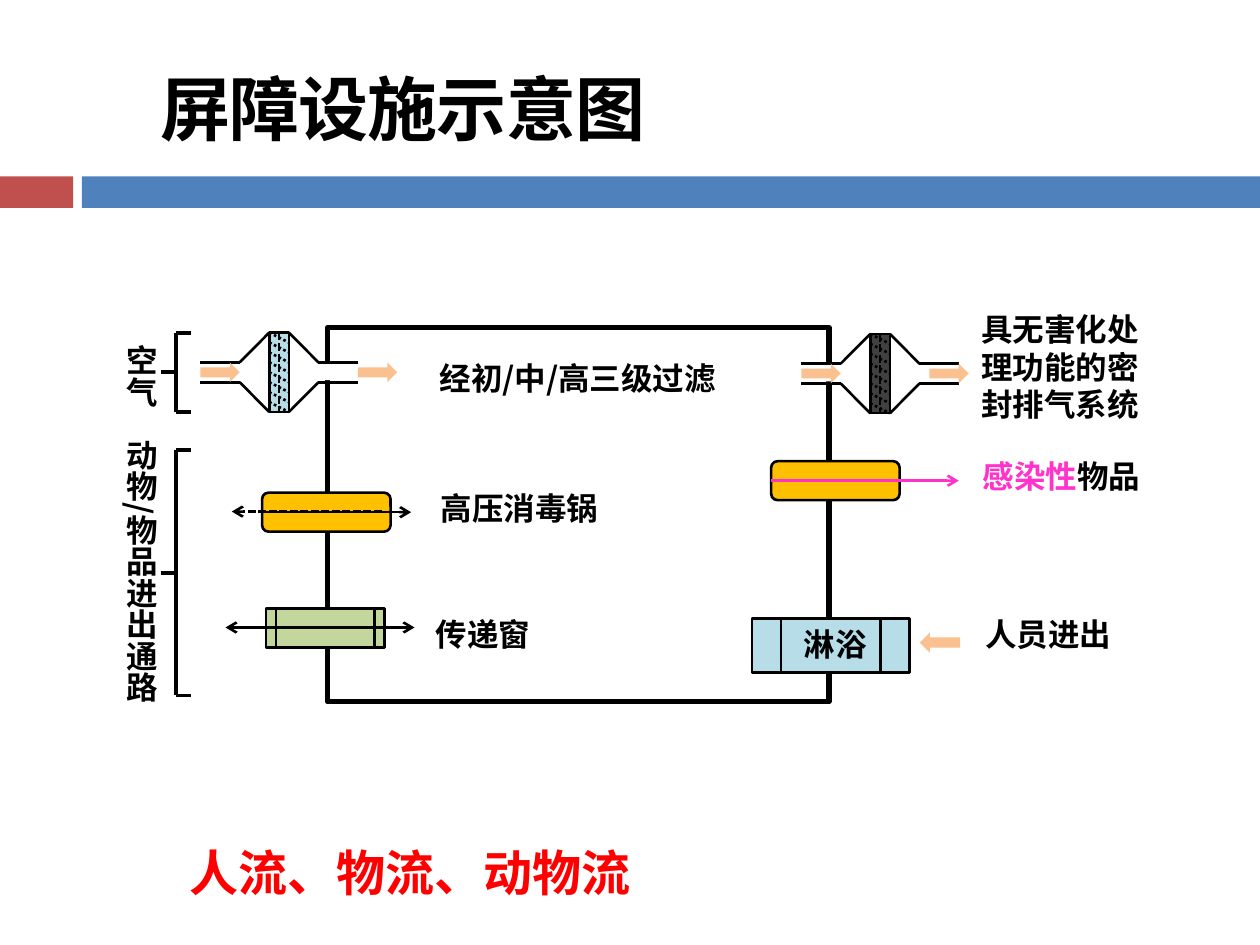
from dataclasses import dataclass

from lxml.etree import SubElement
from pptx import Presentation
from pptx.dml.color import RGBColor
from pptx.enum.dml import MSO_LINE
from pptx.enum.shapes import MSO_CONNECTOR, MSO_SHAPE
from pptx.enum.text import MSO_ANCHOR, MSO_AUTO_SIZE, PP_ALIGN
from pptx.oxml.ns import qn
from pptx.util import Inches, Pt

COLORS = {
    "black": "000000", "white": "FFFFFF", "red": "FF0000", "pink": "FF33CC",
    "brick": "C0504D", "blue": "4F81BC", "peach": "FAC090", "amber": "FFC000",
    "green": "C3D69B", "ice": "B7DEE8", "charcoal": "404040",
}
CJK_FONT = "Noto Sans CJK SC"
LATIN_FONT = "Calibri"
TOP, LEFT, BOTTOM = 0, 1, 2


@dataclass
class Grid:
    """A box split into equal columns and rows; cells and points are in grid units."""
    left: float
    top: float
    width: float
    height: float
    columns: float = 1
    rows: float = 1

    def point(self, column, row):
        return (Inches(self.left + column * self.width / self.columns),
                Inches(self.top + row * self.height / self.rows))

    def cell(self, column, row, columns, rows):
        return (*self.point(column, row),
                Inches(columns * self.width / self.columns),
                Inches(rows * self.height / self.rows))

    def whole(self):
        return self.cell(0, 0, self.columns, self.rows)


PAGE = Grid(0, 0, 10, 7.5, 10, 7.5)


def rgb(name):
    return RGBColor.from_string(COLORS[name])


def write(frame, *runs, size=18, font=CJK_FONT, wrap=False, vertical=False):
    """Fill a text frame with (text, colour) runs in one paragraph."""
    frame.word_wrap = wrap
    frame.vertical_anchor = MSO_ANCHOR.TOP
    if vertical:
        frame._txBody.bodyPr.set("vert", "eaVert")
    paragraph = frame.paragraphs[0]
    paragraph.alignment = PP_ALIGN.LEFT
    for text, color in runs:
        run = paragraph.add_run()
        run.text = text
        run.font.size = Pt(size)
        run.font.bold = True
        run.font.name = font
        run.font.color.rgb = rgb(color)
        SubElement(run._r.get_or_add_rPr(), qn("a:ea")).set("typeface", CJK_FONT)


def add_label(slide, place, *runs, **text_format):
    frame = slide.shapes.add_textbox(*place).text_frame
    frame.auto_size = MSO_AUTO_SIZE.SHAPE_TO_FIT_TEXT
    write(frame, *runs, **text_format)


def add_block(slide, place, fill, kind=MSO_SHAPE.RECTANGLE, line=None):
    shape = slide.shapes.add_shape(kind, *place)
    shape.shadow.inherit = False
    shape.fill.solid()
    shape.fill.fore_color.rgb = rgb(fill)
    if line:
        shape.line.color.rgb = rgb("black")
        shape.line.width = Pt(line)
    else:
        shape.line.fill.background()
    return shape


def add_line(slide, start, end, color="black", width=1.5, dash=None, arrow=False):
    connector = slide.shapes.add_connector(MSO_CONNECTOR.STRAIGHT, *start, *end)
    connector.line.color.rgb = rgb(color)
    connector.line.width = Pt(width)
    if dash:
        connector.line.dash_style = dash
    if arrow:
        SubElement(connector.line._get_or_add_ln(), qn("a:tailEnd")).set("type", "arrow")
    SubElement(connector._element.spPr, qn("a:effectLst"))
    return connector


def add_header(slide):
    title = slide.shapes.title
    title.left, title.top, title.width, title.height = PAGE.cell(1.27, 0.25, 6.96, 0.78)
    frame = title.text_frame
    frame.auto_size = MSO_AUTO_SIZE.NONE
    frame.margin_left = frame.margin_right = frame.margin_bottom = 0
    frame.margin_top = Inches(0.27)
    write(frame, ("屏障设施示意图", "black"), size=40, wrap=True)
    for run in frame.paragraphs[0].runs:
        run.font._element.set("spc", "-40")
    add_block(slide, PAGE.cell(0, 1.4, 0.58, 0.25), "brick")
    add_block(slide, PAGE.cell(0.65, 1.4, 9.35, 0.25), "blue")


def add_duct(slide, left, top, filter_color, patch_column, outlet_column):
    """Air duct: two pipes that widen into a filter, with the flow in and out."""
    grid = Grid(left, top, 1.25, 0.63, 16, 8)
    filter_block = add_block(slide, grid.cell(7, 0, 2, 8), filter_color, line=1.5)
    middle = add_line(slide, grid.point(8, 0), grid.point(8, 8), dash=MSO_LINE.SQUARE_DOT)
    middle.begin_connect(filter_block, TOP)
    middle.end_connect(filter_block, BOTTOM)
    for row in range(8):
        add_line(slide, grid.point(7, row), grid.point(9, row + 1), dash=MSO_LINE.ROUND_DOT)
    add_block(slide, grid.cell(patch_column, 3, 3, 1.8), "white")
    for pipe_row, filter_row in ((3, 0), (5, 8)):
        outline = [(0, pipe_row), (4, pipe_row), (7, filter_row)]
        mirrored = [(16 - column, row) for column, row in outline]
        for side in (outline, mirrored):
            for start, end in zip(side, side[1:]):
                add_line(slide, grid.point(*start), grid.point(*end))
    for column in (0, outlet_column):
        add_block(slide, grid.cell(column, 3, 4, 2), "peach", MSO_SHAPE.RIGHT_ARROW)


def add_bracket(slide, top, height, text, text_top, text_height):
    """Left bracket with a stub at its middle, and a vertical label beside it."""
    grid = Grid(1.28, top, 0.24, height, 2, 2)
    for start, end in (((1, 0), (1, 2)), ((1, 0), (2, 0)), ((1, 2), (2, 2)), ((0, 1), (1, 1))):
        add_line(slide, grid.point(*start), grid.point(*end), width=2.25)
    add_label(slide, PAGE.cell(0.82, text_top, 0.5, text_height), (text, "black"), vertical=True)


def add_chamber(slide, grid, fill, door):
    """Pass-through chamber with a door of the given width at each end."""
    for column, width in ((0, door), (door, 0.83), (grid.width - door, door)):
        add_block(slide, Grid(grid.left + column, grid.top, width, grid.height).whole(),
                  fill, line=1.5)


def add_autoclave(slide, grid, reach, color="black"):
    """Rounded vessel with an arrow from its left side out to the right."""
    vessel = add_block(slide, grid.whole(), "amber", MSO_SHAPE.ROUNDED_RECTANGLE, line=1.5)
    arrow = add_line(slide, grid.point(0, 0.5), grid.point(reach, 0.5), color, arrow=True)
    arrow.begin_connect(vessel, LEFT)


def add_entry_side(slide):
    add_bracket(slide, 2.64, 0.63, "空气", 2.64, 0.6)
    add_duct(slide, 1.59, 2.64, "ice", patch_column=12, outlet_column=16)
    add_label(slide, PAGE.cell(3.39, 2.8, 2.49, 0.7), ("经初/中/高三级过滤", "black"), wrap=True)

    add_bracket(slide, 3.57, 1.95, "动物/物品进出通路", 3.39, 2.22)
    add_autoclave(slide, Grid(2.08, 3.91, 1.02, 0.31), reach=1.16)
    add_line(slide, PAGE.point(3.03, 4.06), PAGE.point(1.84, 4.06),
             dash=MSO_LINE.SQUARE_DOT, arrow=True)
    add_label(slide, PAGE.cell(3.4, 3.83, 1.46, 0.4), ("高压消毒锅", "black"))

    add_chamber(slide, Grid(2.11, 4.83, 0.94, 0.31), "green", 0.08)
    for start, end in ((2.66, 3.29), (2.73, 1.79)):
        add_line(slide, PAGE.point(start, 4.98), PAGE.point(end, 4.98), arrow=True)
    add_label(slide, PAGE.cell(3.36, 4.83, 0.96, 0.4), ("传递窗", "black"))


def add_exit_side(slide):
    add_duct(slide, 6.36, 2.65, "charcoal", patch_column=1, outlet_column=13)
    add_label(slide, PAGE.cell(7.69, 2.41, 1.64, 1.01),
              ("具无害化处理功能的密封排气系统", "black"), wrap=True)

    add_autoclave(slide, Grid(6.12, 3.66, 1.02, 0.31), reach=1.46, color="pink")
    add_label(slide, PAGE.cell(7.7, 3.58, 1.47, 0.4), ("感染性", "pink"), ("物品", "black"))

    add_chamber(slide, Grid(5.97, 4.91, 1.25, 0.43), "ice", 0.23)
    add_label(slide, PAGE.cell(6.28, 4.91, 0.71, 0.4), ("淋浴", "black"))
    add_block(slide, PAGE.cell(7.3, 5.02, 0.32, 0.16), "peach", MSO_SHAPE.LEFT_ARROW)
    add_label(slide, PAGE.cell(7.72, 4.83, 1.22, 0.4), ("人员进出", "black"))


def main():
    presentation = Presentation()
    presentation.slide_width, presentation.slide_height = Inches(10), Inches(7.5)
    slide = presentation.slides.add_slide(presentation.slide_layouts[5])
    add_header(slide)
    add_block(slide, PAGE.cell(2.6, 2.6, 3.98, 2.97), "white", line=3)
    add_entry_side(slide)
    add_exit_side(slide)
    add_label(slide, PAGE.cell(1.41, 6.64, 3.74, 0.57), ("人流、物流、动物流", "red"),
              size=28, font=LATIN_FONT)
    presentation.save("out.pptx")


if __name__ == "__main__":
    main()
